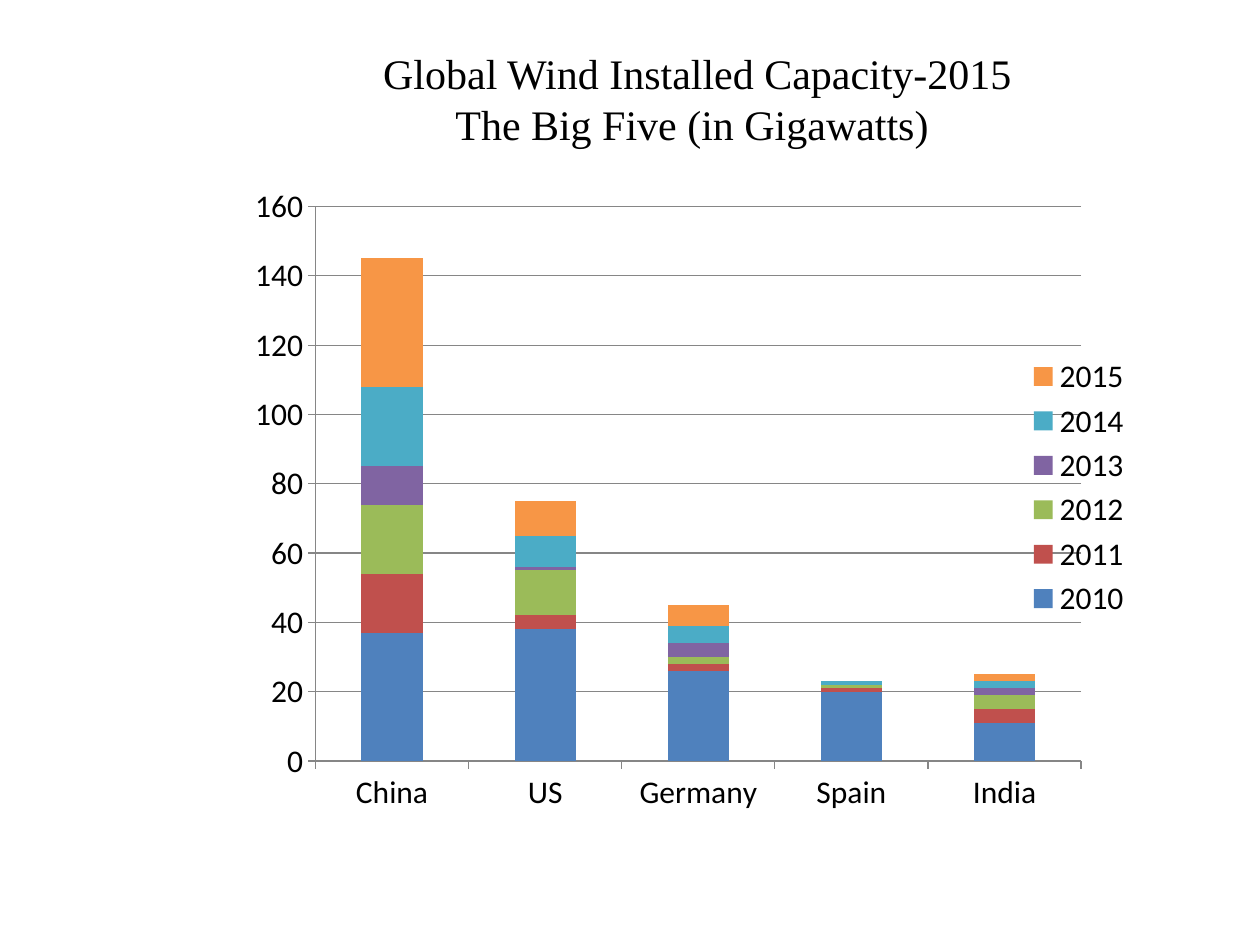
import lxml.etree
import pptx
import pptx.chart.data
import pptx.dml.color
import pptx.enum.chart
import pptx.enum.text
import pptx.oxml
import pptx.oxml.ns
import pptx.util
from pptx.util import Cm

COLORS = {
    "text": "000000",
    "axis": "868686",
    "2010": "4F81BD",
    "2011": "C0504D",
    "2012": "9BBB59",
    "2013": "8064A2",
    "2014": "4BACC6",
    "2015": "F79646",
}
COUNTRIES = ["China", "US", "Germany", "Spain", "India"]
ADDED_GIGAWATTS = {
    "2010": [37, 38, 26, 20, 11],
    "2011": [17, 4, 2, 1, 4],
    "2012": [20, 13, 2, 1, 4],
    "2013": [11, 1, 4, 0, 2],
    "2014": [23, 9, 5, 1, 2],
    "2015": [37, 10, 6, 0, 2],
}
PLOT_AREA = {"x": 0.16, "y": 0.076, "w": 0.776, "h": 0.837}


def rgb(name):
    return pptx.dml.color.RGBColor.from_string(COLORS[name])


def set_plot_layout(chart, fractions):
    """Fix the inner plot area, given as fractions of the chart's size."""
    qn = pptx.oxml.ns.qn
    area = chart.element.find(".//" + qn("c:plotArea"))
    for old in area.findall(qn("c:layout")):
        area.remove(old)
    layout = lxml.etree.Element(qn("c:layout"))
    manual = lxml.etree.SubElement(layout, qn("c:manualLayout"))
    settings = {"layoutTarget": "inner", "xMode": "edge", "yMode": "edge", **fractions}
    for tag, value in settings.items():
        lxml.etree.SubElement(manual, qn("c:" + tag)).set("val", str(value))
    area.insert(0, layout)


class SlideBuilder:
    """Holds the shared style and the slide being filled."""

    title_font, title_size = "Times New Roman", pptx.util.Pt(24)
    chart_font, chart_size = "Calibri", pptx.util.Pt(18)
    line_width = pptx.util.Pt(0.75)

    def __init__(self, prs):
        self.slide = prs.slides.add_slide(prs.slide_layouts[6])

    def style_font(self, font, name, size):
        font.name, font.size = name, size
        font.color.rgb = rgb("text")

    def style_line(self, line):
        line.color.rgb = rgb("axis")
        line.width = self.line_width

    def title(self, lines, left, top, width, height):
        tf = self.slide.shapes.add_textbox(left, top, width, height).text_frame
        tf.word_wrap = False
        tf.auto_size = pptx.enum.text.MSO_AUTO_SIZE.SHAPE_TO_FIT_TEXT
        tf.text = "\n".join(lines)
        for p in tf.paragraphs:
            p.alignment = pptx.enum.text.PP_ALIGN.CENTER
            self.style_font(p.font, self.title_font, self.title_size)

    def stacked_columns(self, categories, series, left, top, width, height):
        data = pptx.chart.data.CategoryChartData()
        data.categories = categories
        for name, values in series.items():
            data.add_series(name, values)
        chart = self.slide.shapes.add_chart(
            pptx.enum.chart.XL_CHART_TYPE.COLUMN_STACKED,
            left, top, width, height, data).chart
        chart.has_title = False
        self.style_font(chart.font, self.chart_font, self.chart_size)
        set_plot_layout(chart, PLOT_AREA)

        plot = chart.plots[0]
        plot.gap_width, plot.overlap = 150, 100
        plot.vary_by_categories = False
        for s in plot.series:
            s.format.fill.solid()
            s.format.fill.fore_color.rgb = rgb(s.name)

        for axis in (chart.category_axis, chart.value_axis):
            axis.major_tick_mark = pptx.enum.chart.XL_TICK_MARK.OUTSIDE
            self.style_line(axis.format.line)
        value_axis = chart.value_axis
        value_axis.minimum_scale, value_axis.maximum_scale = 0, 160
        value_axis.major_unit = 20
        value_axis.has_major_gridlines = True
        self.style_line(value_axis.major_gridlines.format.line)

        chart.has_legend = True
        chart.legend.position = pptx.enum.chart.XL_LEGEND_POSITION.RIGHT
        chart.legend.include_in_layout = False


def main():
    prs = pptx.Presentation()
    prs.slide_width, prs.slide_height = Cm(25.4), Cm(19.05)
    builder = SlideBuilder(prs)
    builder.stacked_columns(COUNTRIES, ADDED_GIGAWATTS,
                            Cm(3.18), Cm(3.15), Cm(19.89), Cm(13.36))
    builder.title(["Global Wind Installed Capacity-2015", "The Big Five (in Gigawatts) "],
                  Cm(7.42), Cm(0.84), Cm(13.28), Cm(2.31))
    prs.save("out.pptx")


if __name__ == "__main__":
    main()
